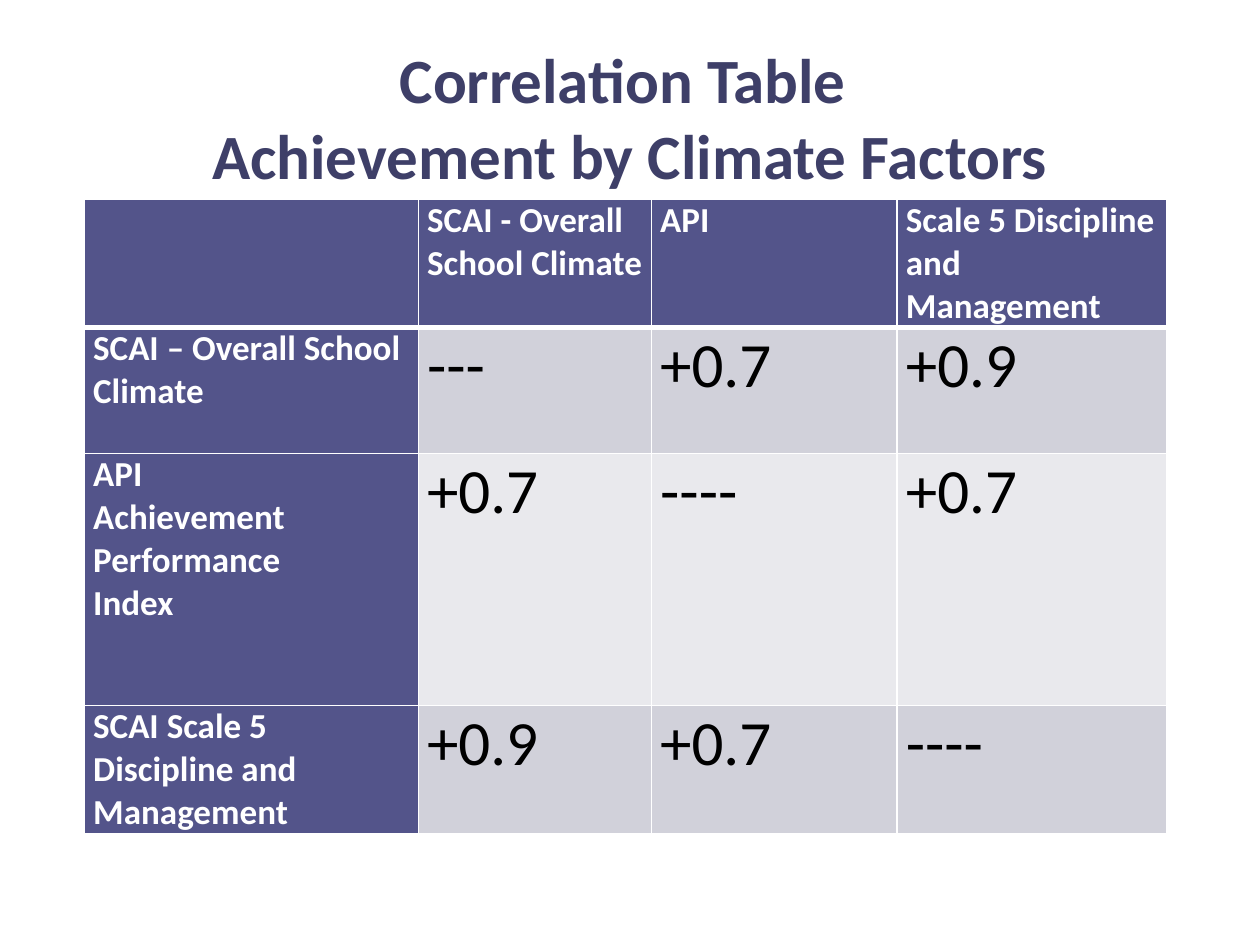
from typing import NamedTuple

from lxml.etree import SubElement
from pptx import Presentation
from pptx.dml.color import RGBColor
from pptx.enum.text import MSO_ANCHOR, PP_ALIGN
from pptx.oxml.ns import qn
from pptx.util import Inches, Pt

COLORS = {
    "title": "3E3F68",
    "header": "53548A",
    "band_dark": "D1D1DA",
    "band_light": "E9E9ED",
    "white": "FFFFFF",
    "black": "000000",
}
FONT = "Calibri"


class TextStyle(NamedTuple):
    size: int
    color: str
    bold: bool


TITLE = TextStyle(36, "title", True)
LABEL = TextStyle(20, "white", True)
VALUE = TextStyle(36, "black", False)

COLUMN_WIDTHS = [2.65, 1.85, 1.95, 2.14]
ROW_HEIGHTS = [1.02, 1, 2, 1.02]
ROWS = [
    ["", "SCAI - Overall School Climate", "API", "Scale 5 Discipline and Management"],
    ["SCAI – Overall School Climate", "---", "+0.7", "+0.9"],
    ["API\nAchievement Performance\nIndex", "+0.7", "----", "+0.7"],
    ["SCAI Scale 5 Discipline and Management", "+0.9", "+0.7", "----"],
]


def style_text(text_frame, style: TextStyle) -> None:
    for paragraph in text_frame.paragraphs:
        font = paragraph.font
        font.name = FONT
        font.size = Pt(style.size)
        font.bold = style.bold
        font.color.rgb = RGBColor.from_string(COLORS[style.color])


def set_border(cell, side: str, points: float) -> None:
    # Border lines must come before the cell's fill in the XML
    line = SubElement(cell._tc.get_or_add_tcPr(), qn(f"a:{side}"), w=str(Pt(points)))
    fill = SubElement(line, qn("a:solidFill"))
    SubElement(fill, qn("a:srgbClr"), val=COLORS["white"])


def fill_cell(cell, text: str, row: int, column: int) -> None:
    is_label = row == 0 or column == 0
    cell.text = text
    cell.margin_left = cell.margin_right = Inches(0.07)
    cell.margin_top = cell.margin_bottom = 0
    style_text(cell.text_frame, LABEL if is_label else VALUE)

    # A thicker rule separates the header row from the body
    set_border(cell, "lnL", 1)
    set_border(cell, "lnR", 1)
    set_border(cell, "lnT", 3 if row == 1 else 1)
    set_border(cell, "lnB", 3 if row == 0 else 1)

    band = "band_dark" if row % 2 else "band_light"
    cell.fill.solid()
    cell.fill.fore_color.rgb = RGBColor.from_string(COLORS["header" if is_label else band])


def add_title(slide) -> None:
    shape = slide.shapes.add_textbox(Inches(0.5), Inches(0.3), Inches(9), Inches(1.25))
    text_frame = shape.text_frame
    text_frame.word_wrap = True
    text_frame.vertical_anchor = MSO_ANCHOR.MIDDLE
    paragraph = text_frame.paragraphs[0]
    paragraph.text = "Correlation Table \vAchievement by Climate Factors"
    paragraph.alignment = PP_ALIGN.CENTER
    style_text(text_frame, TITLE)


def add_correlation_table(slide) -> None:
    table = slide.shapes.add_table(
        len(ROWS), len(COLUMN_WIDTHS), Inches(0.67), Inches(1.58),
        Inches(sum(COLUMN_WIDTHS)), Inches(sum(ROW_HEIGHTS)),
    ).table
    for column, width in zip(table.columns, COLUMN_WIDTHS):
        column.width = Inches(width)
    for row, height in zip(table.rows, ROW_HEIGHTS):
        row.height = Inches(height)
    for row_index, texts in enumerate(ROWS):
        for column_index, text in enumerate(texts):
            fill_cell(table.cell(row_index, column_index), text, row_index, column_index)


def main() -> None:
    presentation = Presentation()
    presentation.slide_width = Inches(10)
    presentation.slide_height = Inches(7.5)
    slide = presentation.slides.add_slide(presentation.slide_layouts[6])
    add_title(slide)
    add_correlation_table(slide)
    presentation.save("out.pptx")


if __name__ == "__main__":
    main()
